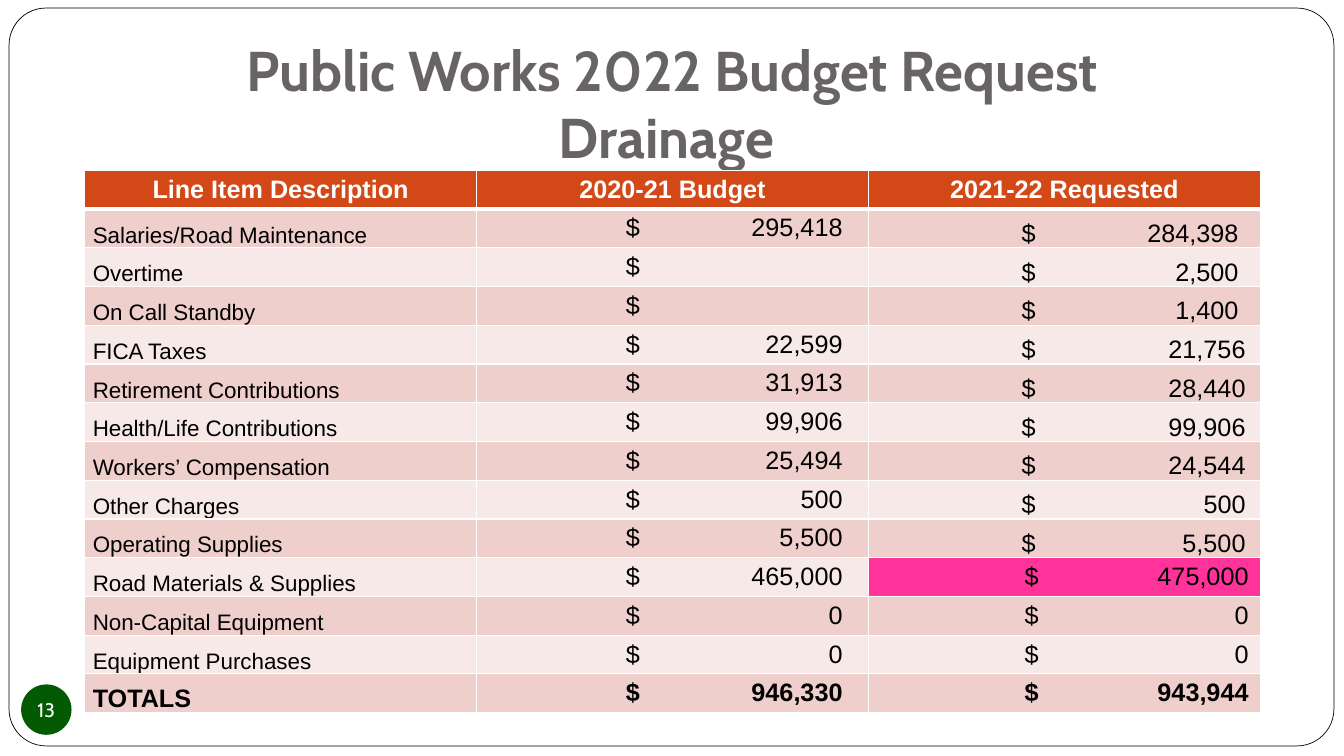
from lxml.etree import SubElement
from pptx import Presentation
from pptx.dml.color import RGBColor
from pptx.enum.shapes import MSO_SHAPE as Shape
from pptx.enum.text import MSO_ANCHOR as Anchor, MSO_AUTO_SIZE as AutoSize, PP_ALIGN as Align
from pptx.oxml.ns import qn
from pptx.util import Inches, Pt

TITLE = ["Public Works 2022 Budget Request", "Drainage "]
PAGE_NUMBER = "13"
HEADINGS = ["Line Item Description", "2020-21 Budget", "2021-22 Requested"]
BUDGET = [
    ("Salaries/Road Maintenance", "295,418", "284,398"),
    ("Overtime", "", "2,500"),
    ("On Call Standby", "", "1,400"),
    ("FICA Taxes", "22,599", "21,756"),
    ("Retirement Contributions", "31,913", "28,440"),
    ("Health/Life Contributions", "99,906", "99,906"),
    ("Workers’ Compensation", "25,494", "24,544"),
    ("Other Charges", "500", "500"),
    ("Operating Supplies", "5,500", "5,500"),
    ("Road Materials & Supplies", "465,000", "475,000"),
    ("Non-Capital Equipment", "0", "0"),
    ("Equipment Purchases", "0", "0"),
    ("TOTALS", "946,330", "943,944"),
]
HIGHLIGHTED_ITEM = "Road Materials & Supplies"

WHITE = RGBColor(0xFF, 0xFF, 0xFF)
BLACK = RGBColor(0x00, 0x00, 0x00)
GRAY = RGBColor(0x69, 0x64, 0x64)
GREEN = RGBColor(0x02, 0x5A, 0x02)
ORANGE = RGBColor(0xD3, 0x48, 0x17)
PINK = RGBColor(0xFF, 0x33, 0x99)
BANDS = [RGBColor(0xEF, 0xCF, 0xCC), RGBColor(0xF7, 0xE9, 0xE7)]

PADDED = (0.1, 0.05, 0.1, 0.05)
LABEL_INSETS = (0.01, 0.01, 0.01, 0)
FLUSH = (0, 0, 0, 0)
BUDGET_TABS = (1.38, 3.53)
REQUEST_TABS = (1.52, 3.74)
SHORT_REQUEST_TABS = (1.52, 3.67)
PADDED_REQUEST_TABS = (1.45, 3.67)


def set_insets(target, insets):
    for side, inset in zip(("left", "top", "right", "bottom"), insets):
        setattr(target, f"margin_{side}", Inches(inset))


def add_run(paragraph, text, size, font, color, bold=False):
    run = paragraph.add_run()
    run.text = text
    run.font.size = Pt(size)
    run.font.name = font
    run.font.color.rgb = color
    run.font.bold = bold


def add_tabs(paragraph, positions):
    properties = paragraph._p.get_or_add_pPr()
    tab_list = SubElement(properties, qn("a:tabLst"))
    for position, alignment in zip(positions, ("l", "r")):
        SubElement(tab_list, qn("a:tab"), pos=str(Inches(position)), algn=alignment)


def style_cell(cell, fill, insets, anchor, top=1, bottom=1):
    properties = cell._tc.get_or_add_tcPr()
    for side, width in zip("LRTB", (1, 1, top, bottom)):
        line = SubElement(properties, qn(f"a:ln{side}"), w=str(Pt(width)))
        solid = SubElement(line, qn("a:solidFill"))
        SubElement(solid, qn("a:srgbClr"), val=str(WHITE))
    cell.fill.solid()
    cell.fill.fore_color.rgb = fill
    set_insets(cell, insets)
    cell.vertical_anchor = anchor


def add_plain_shape(slide, kind, box, fill):
    shape = slide.shapes.add_shape(kind, *map(Inches, box))
    shape.shadow.inherit = False
    shape.fill.solid()
    shape.fill.fore_color.rgb = fill
    return shape


def add_title(slide):
    title = slide.shapes.title
    title.left, title.top, title.width, title.height = map(Inches, (2.17, 0.3, 9, 1.25))
    frame = title.text_frame
    frame.word_wrap = True
    frame.auto_size = AutoSize.NONE
    frame.vertical_anchor = Anchor.TOP
    set_insets(frame, (0.1, 0.05, 0.1, 0.1))
    paragraph = frame.paragraphs[0]
    paragraph.alignment = Align.CENTER
    for index, line in enumerate(TITLE):
        if index:
            paragraph.add_line_break()
        add_run(paragraph, line, 40, "Cabin", GRAY, True)
    return title


def add_border(slide, title):
    border = add_plain_shape(slide, Shape.ROUNDED_RECTANGLE, (0.09, 0.08, 13.14, 7.32), WHITE)
    border.adjustments[0] = 0.05
    border.line.color.rgb = BLACK
    border.line.width = Pt(0.5)
    title.element.addprevious(border.element)


def add_page_number(slide):
    badge = add_plain_shape(slide, Shape.OVAL, (0.21, 6.79, 0.5, 0.5), GREEN)
    badge.line.fill.background()
    frame = badge.text_frame
    frame.word_wrap = False
    frame.vertical_anchor = Anchor.MIDDLE
    set_insets(frame, FLUSH)
    paragraph = frame.paragraphs[0]
    paragraph.alignment = Align.CENTER
    add_run(paragraph, PAGE_NUMBER, 14, "Cabin", WHITE)


def request_layout(index):
    if index >= 9:
        return PADDED_REQUEST_TABS, PADDED, Anchor.TOP
    tabs = SHORT_REQUEST_TABS if index < 3 else REQUEST_TABS
    return tabs, FLUSH, Anchor.BOTTOM


def add_budget_table(slide):
    row_count = len(BUDGET) + 1
    box = map(Inches, (0.84, 1.69, 11.66, 5.38))
    table = slide.shapes.add_table(row_count, len(HEADINGS), *box).table
    for row in table.rows:
        row.height = Inches(5.38 / row_count)

    for column, heading in enumerate(HEADINGS):
        cell = table.cell(0, column)
        style_cell(cell, ORANGE, PADDED, Anchor.TOP, bottom=3)
        paragraph = cell.text_frame.paragraphs[0]
        paragraph.alignment = Align.CENTER
        add_run(paragraph, heading, 18, "Arial", WHITE, True)

    for index, (item, budget, request) in enumerate(BUDGET):
        top = 3 if index == 0 else 1
        is_total = item == "TOTALS"
        band = BANDS[index % 2]

        label = table.cell(index + 1, 0)
        style_cell(label, band, LABEL_INSETS, Anchor.BOTTOM, top)
        paragraph = label.text_frame.paragraphs[0]
        paragraph._p.get_or_add_pPr().set("marL", str(Inches(0.07)))
        add_run(paragraph, item, 18 if is_total else 16, "Arial", BLACK, is_total)

        request_fill = PINK if item == HIGHLIGHTED_ITEM else band
        amounts = [
            (budget, band, BUDGET_TABS, PADDED, Anchor.TOP),
            (request, request_fill, *request_layout(index)),
        ]
        for column, (amount, fill, tabs, insets, anchor) in enumerate(amounts, 1):
            cell = table.cell(index + 1, column)
            style_cell(cell, fill, insets, anchor, top)
            paragraph = cell.text_frame.paragraphs[0]
            add_tabs(paragraph, tabs)
            text = f"\t$\t{amount}" if amount else "\t$"
            add_run(paragraph, text, 18, "Arial", BLACK, is_total)


def main():
    presentation = Presentation()
    presentation.slide_width = Inches(13.33)
    presentation.slide_height = Inches(7.5)
    slide = presentation.slides.add_slide(presentation.slide_layouts[5])
    title = add_title(slide)
    add_border(slide, title)
    add_page_number(slide)
    add_budget_table(slide)
    presentation.save("out.pptx")


if __name__ == "__main__":
    main()
